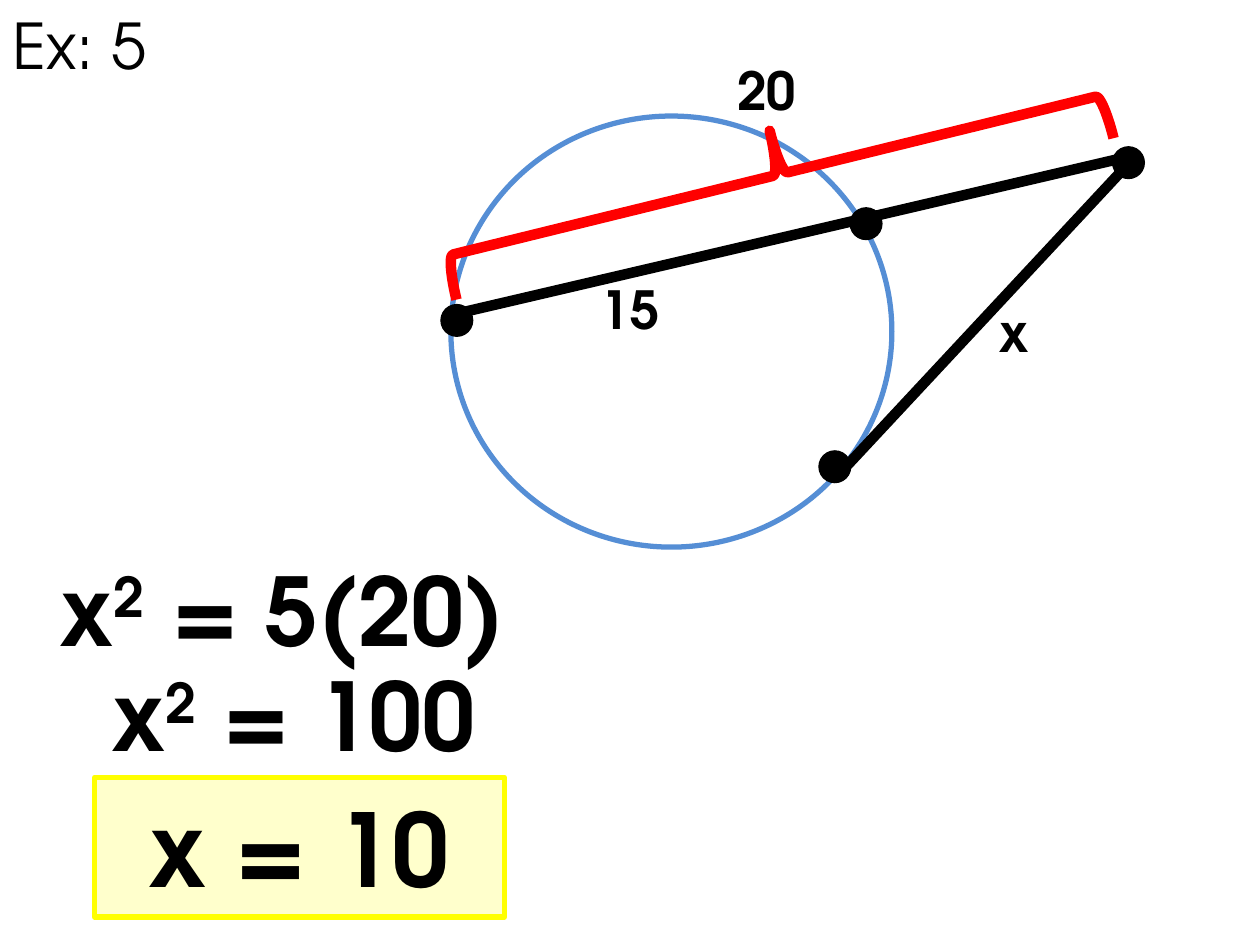
from pptx import Presentation
from pptx.dml.color import RGBColor
from pptx.enum.shapes import MSO_CONNECTOR, MSO_SHAPE
from pptx.enum.text import MSO_ANCHOR, PP_ALIGN
from pptx.oxml.ns import qn
from pptx.util import Cm, Pt
from lxml.etree import SubElement

BLACK, BLUE, RED = "000000", "558ED5", "FF0000"
YELLOW, CREAM = "FFFF00", "FFFFCC"


def color(hex_code):
    return RGBColor.from_string(hex_code)


class Board:
    """Holds the text style and the slide being drawn; lengths are in cm."""

    font_name = "TeX Gyre Adventor"

    def __init__(self, page):
        self.page = page

    def style(self, para, size, bold=True, align=PP_ALIGN.LEFT):
        para.alignment = align
        para.font.name = self.font_name
        para.font.size = Pt(size)
        para.font.bold = bold
        para.font.color.rgb = color(BLACK)

    def title(self, text, width, height):
        box = self.page.shapes.title
        box.left, box.top, box.width, box.height = 0, 0, Cm(width), Cm(height)
        box.text_frame.text = text
        box.text_frame.vertical_anchor = MSO_ANCHOR.BOTTOM
        self.style(box.text_frame.paragraphs[0], 36, bold=False)

    def shape(self, kind, left, top, width, height, line, weight, fill=None):
        shape = self.page.shapes.add_shape(
            kind, Cm(left), Cm(top), Cm(width), Cm(height))
        shape.shadow.inherit = False
        shape.line.color.rgb = color(line)
        shape.line.width = Pt(weight)
        if fill:
            shape.fill.solid()
            shape.fill.fore_color.rgb = color(fill)
        else:
            shape.fill.background()
        return shape

    def point(self, x, y, size=0.64):
        self.shape(MSO_SHAPE.OVAL, x - size / 2, y - size / 2, size, size,
                   BLACK, 0.75, BLACK)

    def segment(self, start, end):
        line = self.page.shapes.add_connector(
            MSO_CONNECTOR.STRAIGHT, *map(Cm, start + end))
        line.line.color.rgb = color(BLACK)
        line.line.width = Pt(6)
        SubElement(line._element.spPr, qn("a:effectLst"))

    def brace(self, left, top, width, height, rotation):
        brace = self.shape(MSO_SHAPE.LEFT_BRACE, left, top, width, height, RED, 6)
        brace.rotation = rotation
        brace.adjustments[0] = 0.083
        brace.adjustments[1] = 0.491

    def text_box(self, left, top, width, height):
        box = self.page.shapes.add_textbox(
            Cm(left), Cm(top), Cm(width), Cm(height))
        box.text_frame.word_wrap = True
        return box.text_frame.paragraphs[0]

    def label(self, text, left, top):
        para = self.text_box(left, top, 2.97, 1.52)
        para.text = text
        self.style(para, 30)

    def square_equation(self, right_side, left, top):
        """Writes x squared = right_side."""
        para = self.text_box(left, top, 11, 2.57)
        self.style(para, 54, align=PP_ALIGN.CENTER)
        for text, raised in (("x", False), ("2", True), (f" = {right_side}", False)):
            span = para.add_run()
            span.text = text
            if raised:
                span._r.get_or_add_rPr().set("baseline", "30000")

    def answer(self, text, left, top, width, height):
        box = self.shape(MSO_SHAPE.RECTANGLE, left, top, width, height,
                         YELLOW, 3, CREAM)
        para = box.text_frame.paragraphs[0]
        para.text = text
        self.style(para, 58, align=PP_ALIGN.CENTER)


def main():
    deck = Presentation()
    deck.slide_width, deck.slide_height = Cm(25.4), Cm(19.05)
    board = Board(deck.slides.add_slide(deck.slide_layouts[5]))

    board.title("Ex: 5", 20.75, 1.78)
    board.shape(MSO_SHAPE.OVAL, 9.09, 2.34, 8.89, 8.69, BLUE, 3)
    board.segment((22.86, 3.18), (16.94, 9.53))
    board.segment((22.66, 3.18), (9.09, 6.35))
    for x, y in ((16.83, 9.41), (17.46, 4.51), (22.75, 3.28), (9.21, 6.46)):
        board.point(x, y)
    board.brace(14.71, -3.28, 1.8, 13.64, rotation=76.2)

    for text, left, top in (("15", 11.86, 5.46), ("20", 14.61, 1.04),
                            ("x", 19.89, 5.92)):
        board.label(text, left, top)

    board.square_equation("5(20)", 0.2, 11)
    board.square_equation("100", 0.43, 13.13)
    board.answer("x = 10", 1.91, 15.67, 8.26, 2.82)

    deck.save("out.pptx")


if __name__ == "__main__":
    main()
